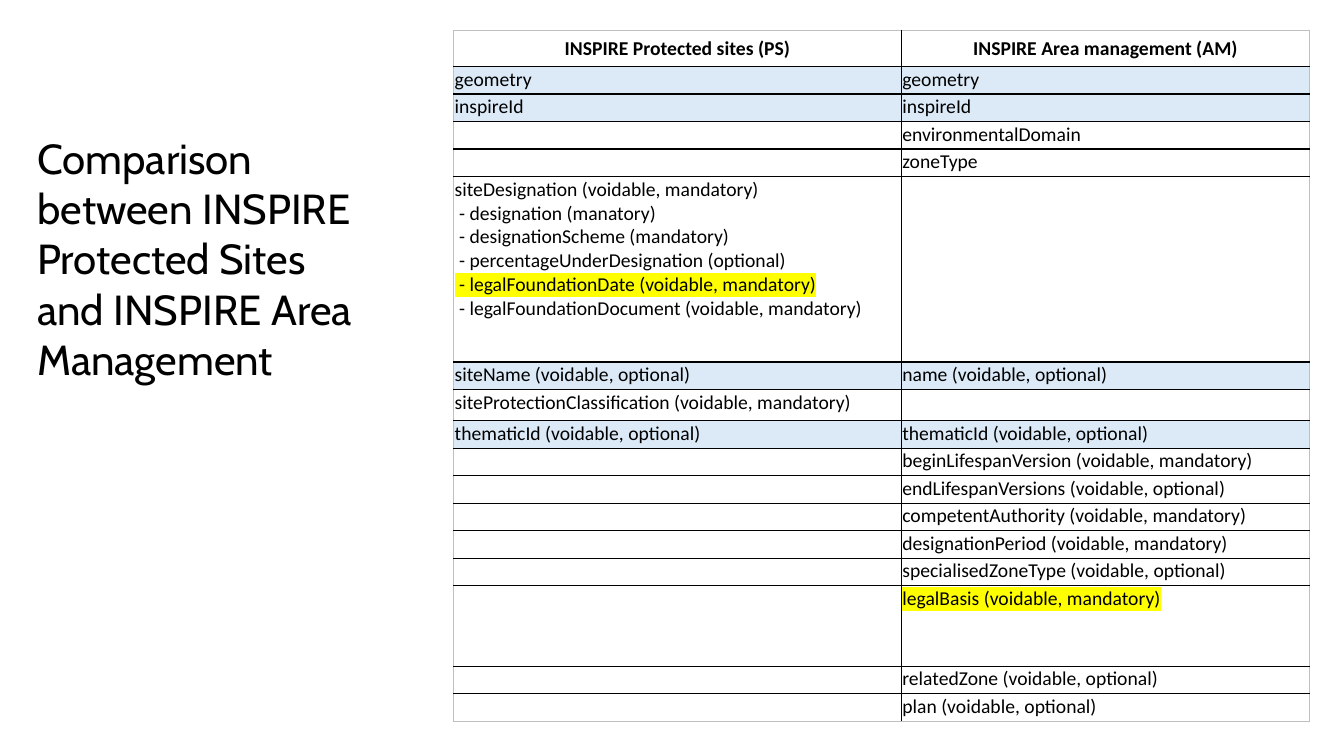
from lxml import etree
from pptx import Presentation
from pptx.dml.color import RGBColor
from pptx.enum.text import MSO_ANCHOR, MSO_AUTO_SIZE, PP_ALIGN
from pptx.oxml.ns import qn
from pptx.util import Inches, Pt

BLACK = RGBColor(0x00, 0x00, 0x00)
GREY = RGBColor(0xBF, 0xBF, 0xBF)
PALE_BLUE = RGBColor(0xDC, 0xEA, 0xF7)
YELLOW = RGBColor(0xFF, 0xFF, 0x00)
TOP, MIDDLE = MSO_ANCHOR.TOP, MSO_ANCHOR.MIDDLE
LEFT, CENTER = PP_ALIGN.LEFT, PP_ALIGN.CENTER
FIT_SHAPE = MSO_AUTO_SIZE.SHAPE_TO_FIT_TEXT

SITE_DESIGNATION = [
    "siteDesignation (voidable, mandatory)",
    " - designation (manatory)",
    " - designationScheme (mandatory)",
    " - percentageUnderDesignation (optional)",
    " - legalFoundationDate (voidable, mandatory)",
    " - legalFoundationDocument (voidable, mandatory)",
]
ROWS = [
    ("INSPIRE Protected sites (PS)", "INSPIRE Area management (AM)"),
    ("geometry", "geometry"),
    ("inspireId", "inspireId"),
    ("", "environmentalDomain"),
    ("", "zoneType"),
    ("\v".join(SITE_DESIGNATION), ""),
    ("siteName (voidable, optional)", "name (voidable, optional)"),
    ("siteProtectionClassification (voidable, mandatory)", ""),
    ("thematicId (voidable, optional)", "thematicId (voidable, optional)"),
    ("", "beginLifespanVersion (voidable, mandatory)"),
    ("", "endLifespanVersions (voidable, optional)"),
    ("", "competentAuthority (voidable, mandatory)"),
    ("", "designationPeriod (voidable, mandatory)"),
    ("", "specialisedZoneType (voidable, optional)"),
    ("", "legalBasis (voidable, mandatory)"),
    ("", "relatedZone (voidable, optional)"),
    ("", "plan (voidable, optional)"),
]
COL_WIDTHS = [4.44, 4.05]
ROW_HEIGHT = 0.273
TALL_ROWS = {0: 0.36, 5: 1.84, 7: 0.31, 14: 0.8}
HIGHLIGHTED = ("legalFoundationDate ", "legalBasis ")


def add_border(cell, tag, color, width):
    ln = etree.SubElement(cell._tc.get_or_add_tcPr(), qn(tag), w=str(Pt(width)))
    fill = etree.SubElement(ln, qn("a:solidFill"))
    etree.SubElement(fill, qn("a:srgbClr"), val=str(color))


def highlight(run):
    mark = etree.Element(qn("a:highlight"))
    etree.SubElement(mark, qn("a:srgbClr"), val=str(YELLOW))
    run._r.rPr.find(qn("a:solidFill")).addnext(mark)


prs = Presentation()
prs.slide_width = Inches(13.33)
prs.slide_height = Inches(7.5)
s = prs.slides.add_slide(prs.slide_layouts[5])

title = s.shapes.title
title.left, title.top = Inches(0.27), Inches(1.26)
title.width, title.height = Inches(3.59), Inches(2.63)
tf = title.text_frame
tf.text = "Comparison between INSPIRE Protected Sites and INSPIRE Area Management"
tf.word_wrap = True
tf.auto_size = FIT_SHAPE
tf.vertical_anchor = TOP
p = tf.paragraphs[0]
p.alignment = LEFT
r = p.runs[0]
r.font.size = Pt(30)
r.font.name = "Cabin"
r.font.color.rgb = BLACK

heights = [TALL_ROWS.get(i, ROW_HEIGHT) for i in range(len(ROWS))]
table = s.shapes.add_table(len(ROWS), 2, Inches(4.5), Inches(0.3),
                           Inches(sum(COL_WIDTHS)), Inches(sum(heights))).table
table.horz_banding = False
table.first_row = False
for column, width in zip(table.columns, COL_WIDTHS):
    column.width = Inches(width)

for i, texts in enumerate(ROWS):
    table.rows[i].height = Inches(heights[i])
    shared = i > 0 and all(texts)
    for j, text in enumerate(texts):
        cell = table.cell(i, j)
        cell.margin_left = cell.margin_right = cell.margin_top = Inches(0.01)
        cell.margin_bottom = 0
        cell.vertical_anchor = TOP if i else MIDDLE
        edges = {"a:lnL": j == 0, "a:lnR": j == 1,
                 "a:lnT": i == 0, "a:lnB": i == len(ROWS) - 1}
        for tag, outer in edges.items():
            add_border(cell, tag, GREY if outer else BLACK, 0.5 if outer else 1)
        if shared:
            cell.fill.solid()
            cell.fill.fore_color.rgb = PALE_BLUE
        else:
            cell.fill.background()

        p = cell.text_frame.paragraphs[0]
        p.text = text
        p.alignment = LEFT if i else CENTER
        for r in p.runs:
            r.font.size = Pt(14)
            r.font.name = "Calibri"
            r.font.bold = i == 0
            r.font.color.rgb = BLACK
            if any(name in r.text for name in HIGHLIGHTED):
                highlight(r)
        for br in p._p.findall(qn("a:br")):
            etree.SubElement(br, qn("a:rPr"), sz="1400")
        if not text:
            etree.SubElement(p._p, qn("a:endParaRPr"), sz="1400")

prs.save("out.pptx")
